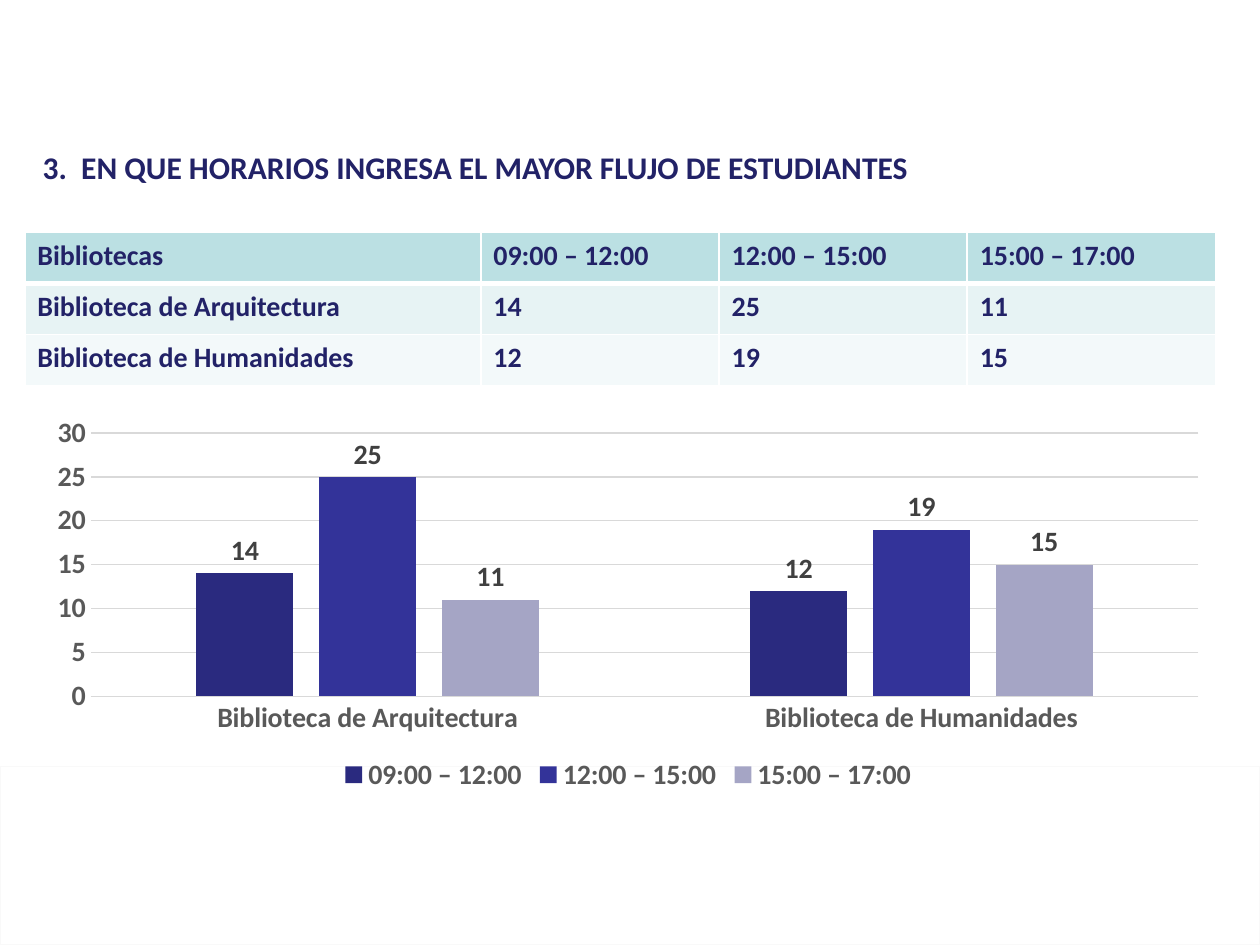
from lxml import etree
from pptx import Presentation
from pptx.chart.data import CategoryChartData
from pptx.dml.color import RGBColor
from pptx.enum.chart import (XL_CHART_TYPE, XL_LABEL_POSITION,
                             XL_LEGEND_POSITION, XL_TICK_MARK)
from pptx.enum.shapes import MSO_SHAPE
from pptx.enum.text import MSO_ANCHOR
from pptx.oxml.ns import qn
from pptx.util import Pt

RECT = MSO_SHAPE.RECTANGLE
MIDDLE = MSO_ANCHOR.MIDDLE
COLUMN = XL_CHART_TYPE.COLUMN_CLUSTERED
OUTSIDE = XL_LABEL_POSITION.OUTSIDE_END
BOTTOM = XL_LEGEND_POSITION.BOTTOM
NO_TICK = XL_TICK_MARK.NONE

NAVY, WHITE, GREY, RULE = "222267", "FFFFFF", "595959", "D9D9D9"
HOURS = ["09:00 – 12:00", "12:00 – 15:00", "15:00 – 17:00"]
COUNTS = {"Biblioteca de Arquitectura": [14, 25, 11],
          "Biblioteca de Humanidades": [12, 19, 15]}
ROW_FILLS = ["BBE0E3", "E7F3F4", "F3F9FA"]
BAR_FILLS = ["2A2A7F", "333399", "A5A5C5"]


def rgb(code):
    return RGBColor.from_string(code)


def paint(fill, code):
    fill.solid()
    fill.fore_color.rgb = rgb(code)


def style(font, size, code):
    font.name = "Calibri"
    font.size = Pt(size)
    font.bold = True
    font.color.rgb = rgb(code)


def rule(line, code):
    line.color.rgb = rgb(code)
    line.width = Pt(0.75)


def write(frame, text, size):
    run = frame.paragraphs[0].add_run()
    run.text = text
    style(run.font, size, NAVY)


def border(cell, side, width):
    props = cell._tc.get_or_add_tcPr()
    line = etree.SubElement(props, qn("a:" + side), w=str(Pt(width)))
    fill = etree.SubElement(line, qn("a:solidFill"))
    etree.SubElement(fill, qn("a:srgbClr"), val=WHITE)


def add_band(slide, box):
    band = slide.shapes.add_shape(RECT, *map(Pt, box))
    band.shadow.inherit = False
    paint(band.fill, WHITE)
    # Let the background show through
    color = band.fill._xPr.find(".//" + qn("a:srgbClr"))
    etree.SubElement(color, qn("a:alpha"), val="65000")
    rule(band.line, "F9F9F9")


def add_title(slide, box):
    frame = slide.shapes.add_textbox(*map(Pt, box)).text_frame
    frame.word_wrap = True
    frame.vertical_anchor = MIDDLE
    write(frame, "3.  EN QUE HORARIOS INGRESA EL MAYOR FLUJO DE ESTUDIANTES", 18)


def add_grid(slide, box):
    rows = [["Bibliotecas", *HOURS]]
    rows += [[name, *map(str, vals)] for name, vals in COUNTS.items()]
    table = slide.shapes.add_table(len(rows), len(rows[0]),
                                   *map(Pt, box)).table
    for col, width in zip(table.columns, [260.6, 136.1, 141.8, 141.8]):
        col.width = Pt(width)
    for r, (texts, code) in enumerate(zip(rows, ROW_FILLS)):
        table.rows[r].height = Pt(box[3] / len(rows))
        for c, text in enumerate(texts):
            cell = table.cell(r, c)
            write(cell.text_frame, text, 16)
            # Heavier rule below the header row
            border(cell, "lnL", 1)
            border(cell, "lnR", 1)
            border(cell, "lnT", 3 if r == 1 else 1)
            border(cell, "lnB", 3 if r == 0 else 1)
            paint(cell.fill, code)


def add_bars(slide, box):
    data = CategoryChartData()
    data.categories = list(COUNTS)
    for hour, vals in zip(HOURS, zip(*COUNTS.values())):
        data.add_series(hour, vals)
    chart = slide.shapes.add_chart(COLUMN, *map(Pt, box), data).chart
    chart.has_title = False
    style(chart.font, 16, "000000")

    # Axes
    cat, val = chart.category_axis, chart.value_axis
    for axis in (cat, val):
        axis.major_tick_mark = axis.minor_tick_mark = NO_TICK
        style(axis.tick_labels.font, 16, GREY)
    rule(cat.format.line, RULE)
    val.format.line.fill.background()
    rule(val.major_gridlines.format.line, RULE)
    val.minimum_scale, val.maximum_scale, val.major_unit = 0, 30, 5

    # Legend
    chart.has_legend = True
    chart.legend.position = BOTTOM
    chart.legend.include_in_layout = False
    style(chart.legend.font, 16, GREY)

    # Columns and their values
    plot = chart.plots[0]
    plot.gap_width, plot.overlap = 219, -27
    plot.vary_by_categories = False
    for series, code in zip(plot.series, BAR_FILLS):
        paint(series.format.fill, code)
        labels = series.data_labels
        labels.show_value = True
        labels.position = OUTSIDE
        style(labels.font, 16, "404040")


def main():
    deck = Presentation()
    deck.slide_width, deck.slide_height = Pt(720), Pt(540)
    slide = deck.slides.add_slide(deck.slide_layouts[6])
    paint(slide.background.fill, WHITE)
    add_band(slide, (0, 438, 720, 102))
    add_title(slide, (17.3, 71.3, 669, 48.2))
    add_grid(slide, (14.2, 132.7, 680.3, 87.6))
    add_bars(slide, (19.4, 233.3, 679, 222.5))
    deck.save("out.pptx")


if __name__ == "__main__":
    main()
